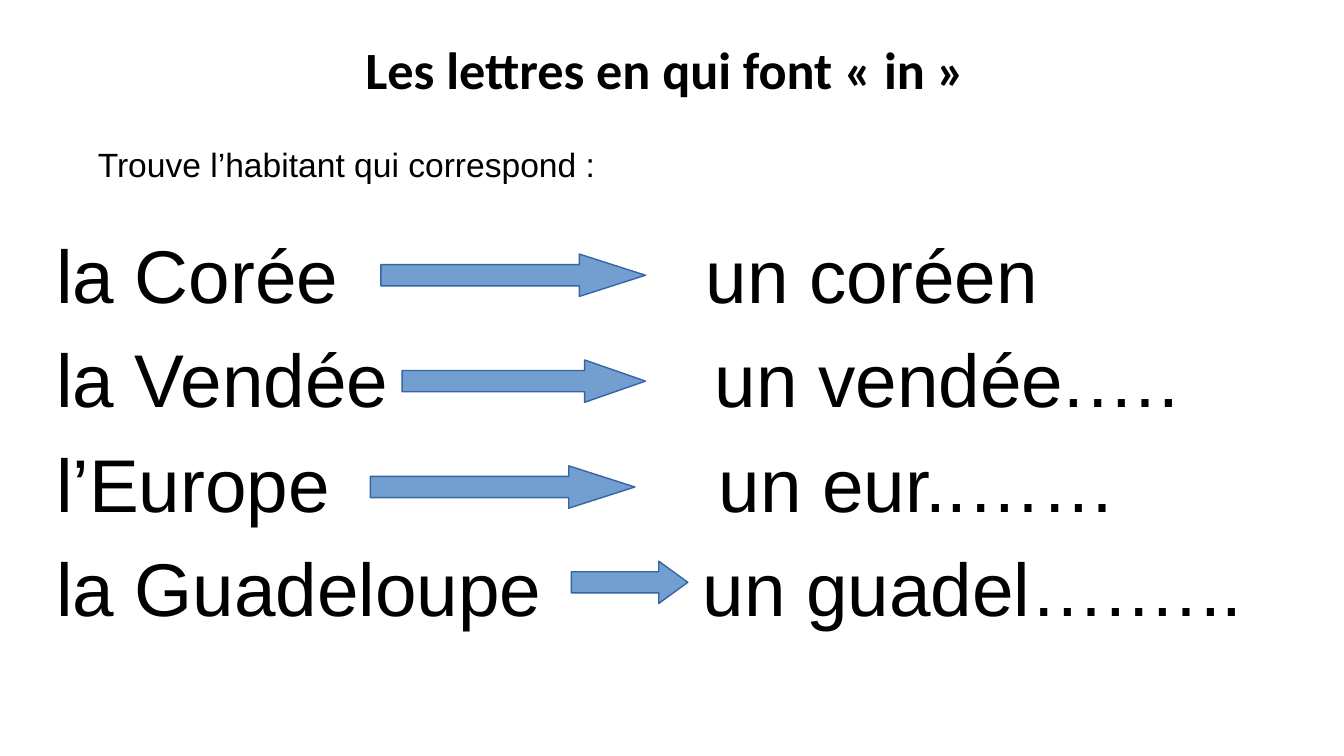
from lxml.etree import SubElement
from pptx import Presentation
from pptx.dml.color import RGBColor
from pptx.enum.shapes import MSO_SHAPE
from pptx.enum.text import PP_ALIGN
from pptx.oxml.ns import qn
from pptx.util import Cm, Pt

COLORS = {"text": "000000", "arrow": "729FCF", "outline": "3465A4"}
TITLE = "Les lettres en qui font «\u00a0in\u00a0»".replace("\u00a0", " ")
INSTRUCTION = "Trouve l’habitant qui correspond :"
ROWS = [
    {"place": "la Corée", "answer": "un coréen", "tab": 12.28, "arrow": (7.2, 4.8, 5)},
    {"place": "la Vendée", "answer": "un vendée.….", "tab": 12.45, "arrow": (7.6, 6.8, 4.6)},
    {"place": "l’Europe", "answer": "un eur..……", "tab": 12.52, "arrow": (7, 8.8, 5)},
    {"place": "la Guadeloupe", "answer": "un guadel….…..", "tab": 12.22, "arrow": (10.8, 10.6, 2.2)},
]
ARROW_HEIGHT = 0.8
HEAD_SHARE = 0.25


def color(name):
    return RGBColor.from_string(COLORS[name])


def add_text_frame(slide, left, top, width, height):
    shape = slide.shapes.add_textbox(Cm(left), Cm(top), Cm(width), Cm(height))
    shape.text_frame.word_wrap = True
    return shape.text_frame


def add_run(paragraph, text, size, font="Arial", bold=False):
    run = paragraph.add_run()
    run.text = text
    run.font.name = font
    run.font.size = Pt(size)
    run.font.bold = bold
    run.font.color.rgb = color("text")


def add_tab_stop(paragraph, position):
    properties = paragraph._p.get_or_add_pPr()
    tabs = SubElement(properties, qn("a:tabLst"))
    SubElement(tabs, qn("a:tab"), pos=str(Cm(position)), algn="l")


def add_arrow(slide, left, top, width):
    shape = slide.shapes.add_shape(
        MSO_SHAPE.RIGHT_ARROW, Cm(left), Cm(top), Cm(width), Cm(ARROW_HEIGHT))
    shape.adjustments[0] = 0.5
    shape.adjustments[1] = HEAD_SHARE * width / ARROW_HEIGHT
    shape.shadow.inherit = False
    shape.fill.solid()
    shape.fill.fore_color.rgb = color("arrow")
    shape.line.color.rgb = color("outline")
    shape.line.width = Pt(0.75)


def main():
    presentation = Presentation()
    presentation.slide_width, presentation.slide_height = Cm(25.4), Cm(14.28)
    slide = presentation.slides.add_slide(presentation.slide_layouts[6])

    instruction = add_text_frame(slide, 1.6, 2.6, 20.4, 0.97).paragraphs[0]
    add_run(instruction, INSTRUCTION, 18)

    exercise = add_text_frame(slide, 0.81, 4.19, 24.5, 8.2)
    for index, row in enumerate(ROWS):
        paragraph = exercise.add_paragraph() if index else exercise.paragraphs[0]
        paragraph.space_before = Pt(8)
        add_tab_stop(paragraph, row["tab"])
        add_run(paragraph, row["place"] + "\t", 40)
        add_run(paragraph, row["answer"], 40)

    title = add_text_frame(slide, 3.4, 0.58, 18.34, 1.8).paragraphs[0]
    title.alignment = PP_ALIGN.CENTER
    add_run(title, TITLE, 28, "Calibri", True)

    for row in ROWS:
        add_arrow(slide, *row["arrow"])

    presentation.save("out.pptx")


if __name__ == "__main__":
    main()
